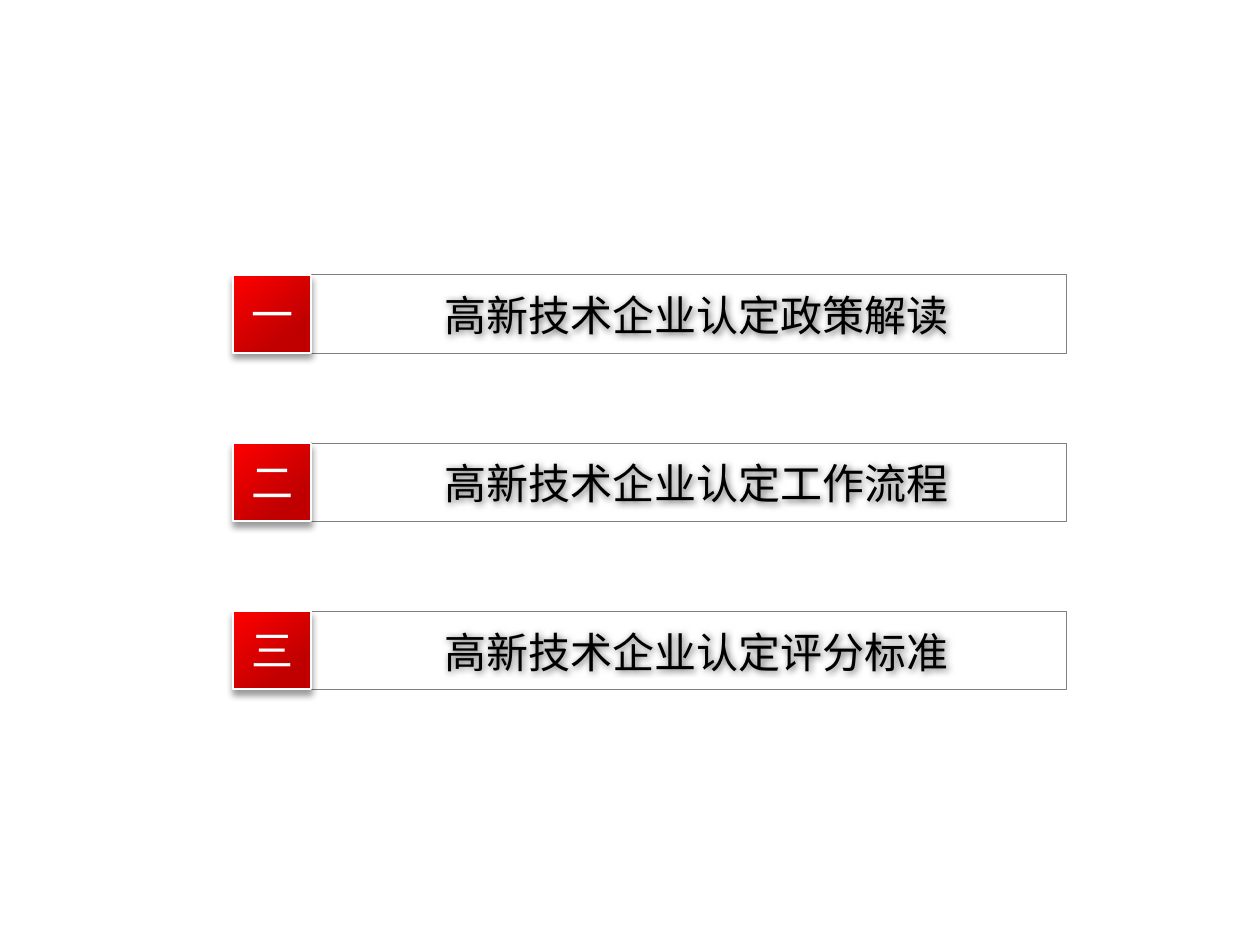
from lxml import etree
from pptx import Presentation
from pptx.dml.color import RGBColor
from pptx.enum.shapes import MSO_SHAPE as SHAPE
from pptx.enum.text import MSO_AUTO_SIZE as AUTO, PP_ALIGN as ALIGN
from pptx.oxml import parse_xml
from pptx.oxml.ns import nsdecls, qn
from pptx.util import Inches, Pt

FONT = "Noto Sans CJK SC"
LEFT, TOP, STEP = 1.85, 2.18, 1.335
BAR_W, SIDE = 6.61, 0.62
LABEL_X, TEXT_H = 2.59, 0.5
ITEMS = [
    ("一", "高新技术企业认定政策解读"),
    ("二", "高新技术企业认定工作流程"),
    ("三", "高新技术企业认定评分标准"),
]


def rgb(value):
    """Turn a hex string into a colour."""
    return RGBColor.from_string(value)


def add_shadow(sp, alpha, blur, dist, angle):
    """Give a shape a soft black shadow; lengths are points."""
    sp.shadow.inherit = False
    effects = sp._element.spPr.find(qn("a:effectLst"))
    effects.append(parse_xml(
        f'<a:outerShdw {nsdecls("a")} blurRad="{Pt(blur)}" dist="{Pt(dist)}" '
        f'dir="{angle * 60000}" algn="ctr" rotWithShape="0">'
        f'<a:srgbClr val="000000"><a:alpha val="{alpha * 1000}"/></a:srgbClr>'
        '</a:outerShdw>'))


def add_box(shapes, x, y, w, h, line, width):
    """Add an unfilled rectangle with a plain outline."""
    sp = shapes.add_shape(SHAPE.RECTANGLE, *map(Inches, (x, y, w, h)))
    sp.shadow.inherit = False
    sp.fill.background()
    sp.line.color.rgb = rgb(line)
    sp.line.width = Pt(width)
    return sp


def add_badge(shapes, x, y):
    """Add the red gradient square that carries a numeral."""
    sp = add_box(shapes, x, y, SIDE, SIDE, "FFFFFF", 1)
    spPr = sp._element.spPr
    spPr.replace(spPr.find(qn("a:noFill")), parse_xml(
        f'<a:gradFill {nsdecls("a")} rotWithShape="1"><a:gsLst>'
        '<a:gs pos="0"><a:srgbClr val="FF0000"/></a:gs>'
        '<a:gs pos="75000"><a:srgbClr val="C00000"/></a:gs>'
        f'</a:gsLst><a:lin ang="{50 * 60000}" scaled="0"/></a:gradFill>'))
    add_shadow(sp, 40, 4, 3, 90)


def add_text(shapes, text, x, y, w, color):
    """Add a centred line of text and return its box and run."""
    sp = shapes.add_textbox(*map(Inches, (x, y, w, TEXT_H)))
    tf = sp.text_frame
    tf.word_wrap = True
    tf.auto_size = AUTO.SHAPE_TO_FIT_TEXT
    tf.text = text
    p = tf.paragraphs[0]
    p.alignment = ALIGN.CENTER
    r = p.runs[0]
    r.font.size = Pt(24)
    r.font.name = FONT
    r.font.color.rgb = rgb(color)
    etree.SubElement(r.font._element, qn("a:ea"), typeface=FONT)
    return sp, r


def add_label(shapes, text, y):
    """Add a heading with outlined letters and a soft shadow."""
    sp, r = add_text(shapes, text, LABEL_X, y, LEFT + BAR_W - LABEL_X, "000000")
    r.font._element.insert(0, parse_xml(
        f'<a:ln {nsdecls("a")} w="{Pt(0.75)}"><a:solidFill>'
        '<a:srgbClr val="595959"/></a:solidFill></a:ln>'))
    add_shadow(sp, 60, 4, 1, 45)


def add_item(slide, numeral, title, y):
    """Add one agenda row as a group."""
    shapes = slide.shapes.add_group_shape().shapes
    add_box(shapes, LEFT, y, BAR_W, SIDE, "808080", 0.25)
    add_badge(shapes, LEFT, y)
    add_text(shapes, numeral, LEFT, y + 0.06, SIDE, "FFFFFF")
    add_label(shapes, title, y + 0.07)


def main():
    """Build the agenda slide."""
    prs = Presentation()
    prs.slide_width, prs.slide_height = Inches(10), Inches(7.5)
    slide = prs.slides.add_slide(prs.slide_layouts[6])
    for row, (numeral, title) in enumerate(ITEMS):
        add_item(slide, numeral, title, TOP + row * STEP)
    prs.save("out.pptx")


if __name__ == "__main__":
    main()
